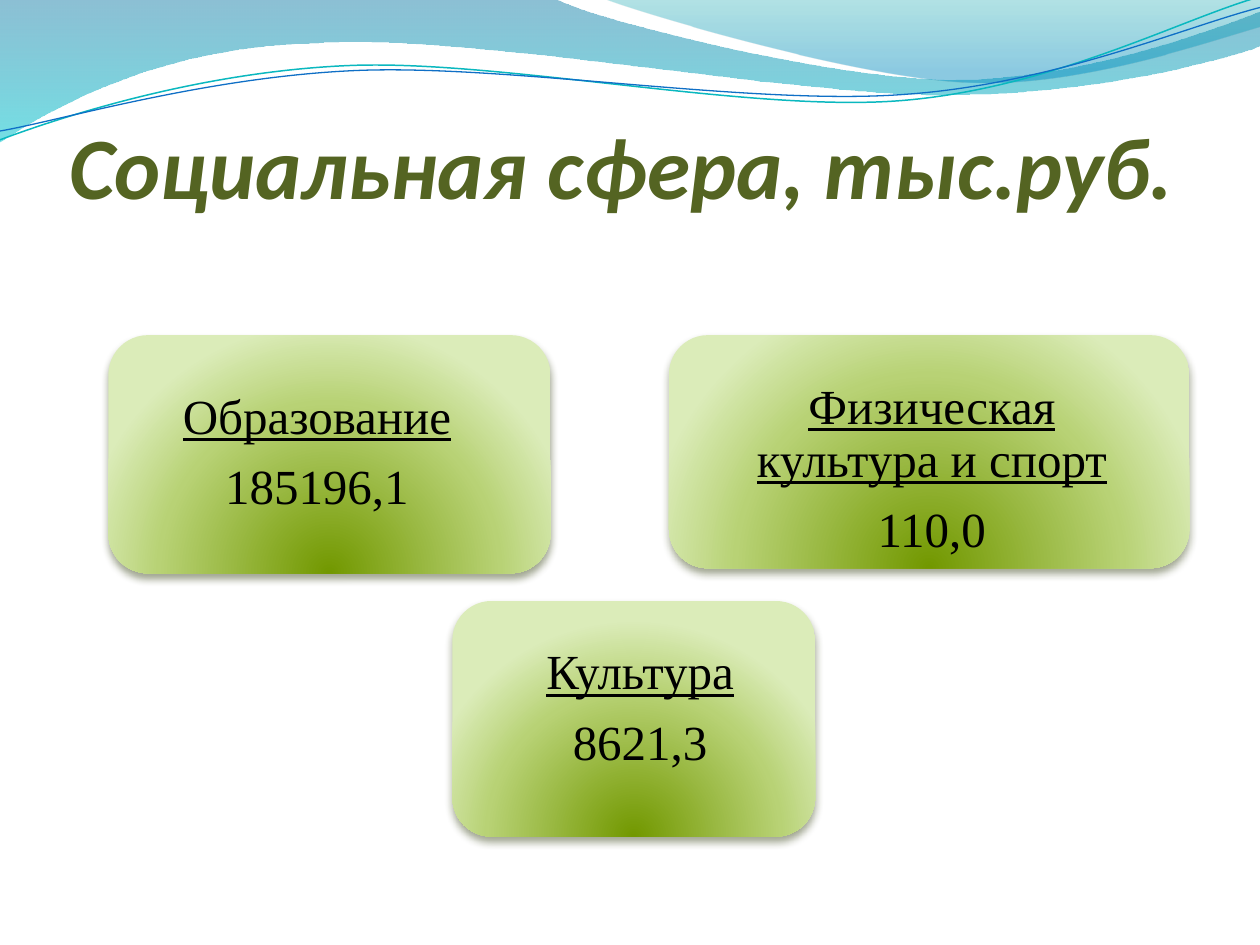
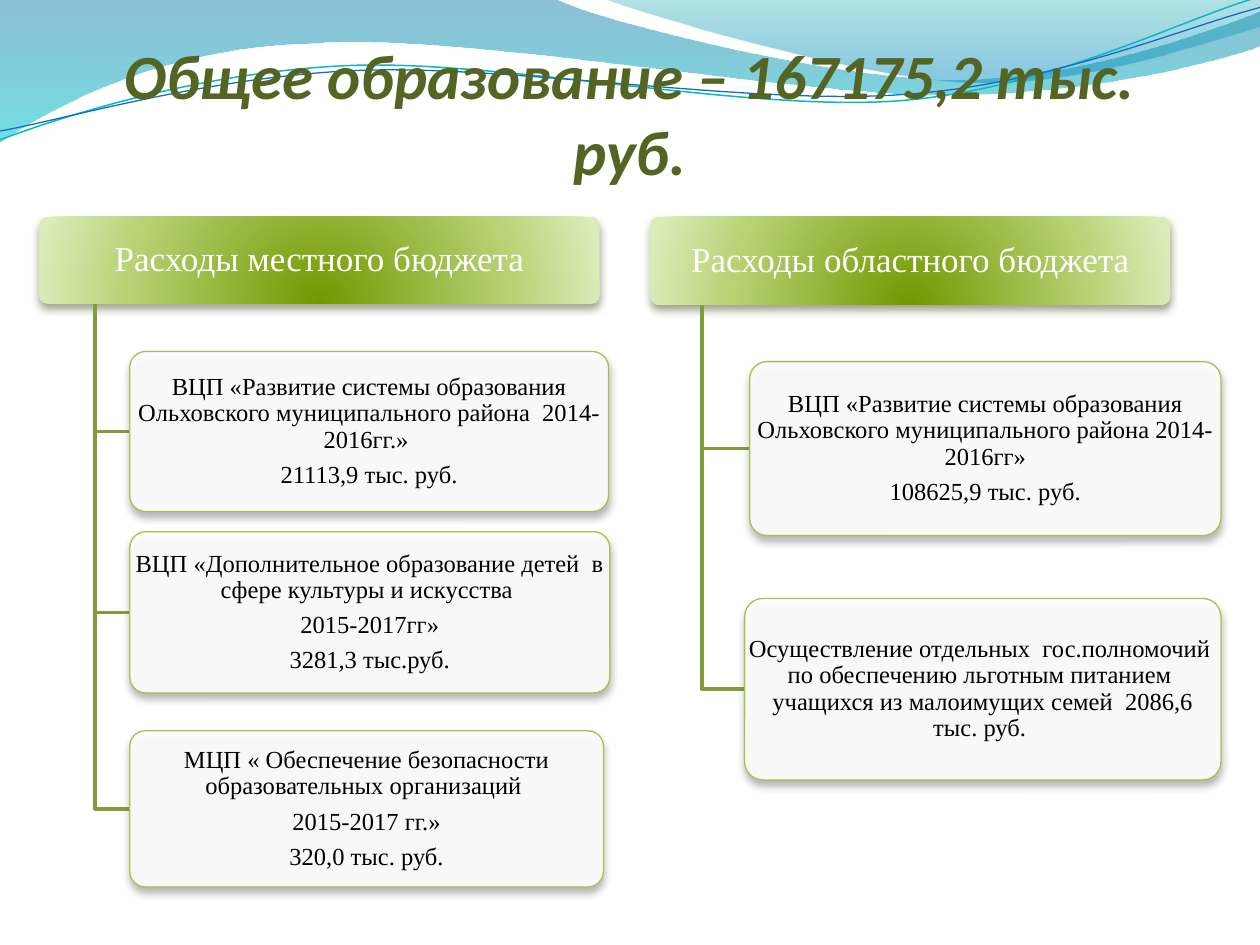
from dataclasses import dataclass
from math import cos, radians, sin

from lxml.etree import SubElement
from pptx import Presentation
from pptx.dml.color import RGBColor
from pptx.enum.shapes import MSO_SHAPE
from pptx.enum.text import MSO_ANCHOR as Anchor, MSO_AUTO_SIZE, PP_ALIGN as Align
from pptx.oxml.ns import qn
from pptx.util import Inches, Pt

WHITE, BLACK = "FFFFFF", "000000"
TITLE_COLOR = "546422"
BRANCH_COLOR = "849B3A"
ITEM_BORDER = "A5C249"
GREEN_SHADOW, GRAY_SHADOW = "3A4519", "5A5A5A"
TITLE_FONT, BODY_FONT = "Calibri", "Times New Roman"
GREEN_STOPS = [(0, "729800", 100), (68, "B8D275", 100), (100, "DBECB9", 100)]
WAVE_TILT = 2.7


@dataclass(frozen=True)
class Box:
    left: float
    top: float
    width: float
    height: float

    @property
    def bottom(self) -> float:
        return self.top + self.height

    @property
    def middle(self) -> float:
        return self.top + self.height / 2

    def lengths(self) -> list:
        return [Inches(v) for v in (self.left, self.top, self.width, self.height)]


@dataclass(frozen=True)
class Wave:
    start: tuple
    segments: list
    stops: list = ()
    line_color: str = ""
    line_width: float = 0
    pivot: tuple = ()


@dataclass(frozen=True)
class TextStyle:
    size: int
    color: str
    insets: tuple
    anchor: Anchor
    underline_first: bool = False


@dataclass(frozen=True)
class Card:
    box: Box
    lines: list
    text_box: Box = None


@dataclass(frozen=True)
class Branch:
    header: Card
    items: list


WAVES = [
    Wave((0, 0), [
        (4.4, -0.01),
        (4.76, 0.17, 6.64, 0.63, 7.58, 0.63), (8.53, 0.63, 9.58, 0.26, 10, 0.09),
        (10.01, 0.36),
        (9.83, 0.44, 8.7, 0.76, 7.46, 0.75), (6.22, 0.75, 3.82, 0.28, 2.57, 0.34),
        (1.29, 0.36, 0.46, 0.83, -0.01, 1.13),
        (0, 0),
    ], stops=[(0, "0074A1", 45), (100, "00C6CF", 55)]),
    Wave((4.79, -0.01), [
        (5.09, 0.11, 6.82, 0.62, 7.69, 0.65), (8.56, 0.69, 9.61, 0.32, 10, 0.21),
        (10, 0), (4.79, -0.01),
    ], stops=[(0, "00A1A9", 30), (80, "008BBF", 45)]),
    Wave((0, 1.11), [
        (0.48, 0.93, 1.58, 0.57, 2.77, 0.52), (3.95, 0.47, 5.93, 0.89, 7.13, 0.8),
        (8.33, 0.71, 9.38, 0.15, 9.98, -0.02),
    ], line_color="0AB8BF", line_width=0.85, pivot=(4.99, 0.57)),
    Wave((0, 1.04), [
        (0.47, 0.96, 1.64, 0.61, 2.83, 0.56), (4.03, 0.51, 5.97, 0.84, 7.17, 0.75),
        (8.36, 0.67, 9.41, 0.21, 10, 0.06),
    ], line_color="0F6FC6", line_width=0.75, pivot=(5, 0.59)),
]

SPHERE_STYLE = TextStyle(28, BLACK, (0.22, 0.22, 0.22, 0), Anchor.TOP, True)
HEADER_STYLE = TextStyle(20, WHITE, (0.04, 0.03, 0.04, 0.03), Anchor.MIDDLE)
ITEM_STYLE = TextStyle(14, BLACK, (0.03, 0.02, 0.03, 0.02), Anchor.MIDDLE)

SPHERES = [
    Card(Box(0.86, 2.66, 3.51, 1.89), ["Образование", "185196,1"],
         Box(1.17, 2.89, 2.69, 1.3)),
    Card(Box(5.31, 2.66, 4.13, 1.85), ["Физическая культура и спорт", "110,0"],
         Box(5.55, 2.81, 3.69, 1.62)),
    Card(Box(3.59, 4.77, 2.88, 1.87), ["Культура", "8621,3"],
         Box(3.83, 4.92, 2.5, 1.54)),
]

BRANCHES = [
    Branch(Card(Box(0.31, 1.72, 4.45, 0.69), ["Расходы местного бюджета"]), [
        Card(Box(1.03, 2.79, 3.8, 1.27), [
            "ВЦП «Развитие системы образования Ольховского муниципального района  2014-2016гг.» ",
            "21113,9 тыс. руб."]),
        Card(Box(1.03, 4.22, 3.81, 1.28), [
            "ВЦП «Дополнительное образование детей  в сфере культуры и искусства ",
            "2015-2017гг»", "3281,3 тыс.руб."]),
        Card(Box(1.03, 5.8, 3.76, 1.24), [
            "МЦП « Обеспечение безопасности образовательных организаций ",
            "2015-2017 гг.»", "320,0 тыс. руб."]),
    ]),
    Branch(Card(Box(5.16, 1.72, 4.13, 0.7), ["Расходы областного бюджета"]), [
        Card(Box(5.95, 2.87, 3.74, 1.38), [
            "ВЦП «Развитие системы образования Ольховского муниципального района 2014-2016гг»",
            "108625,9 тыс. руб."]),
        Card(Box(5.91, 4.75, 3.78, 1.44), [
            "Осуществление отдельных  гос.полномочий  по обеспечению льготным питанием  "
            "учащихся из малоимущих семей  2086,6 тыс. руб. "]),
    ]),
]


def rgb(color: str) -> RGBColor:
    return RGBColor.from_string(color)


def add_color(parent, color: str, opacity: int) -> None:
    color_element = SubElement(parent, qn("a:srgbClr"), val=color)
    if opacity < 100:
        SubElement(color_element, qn("a:alpha"), val=str(opacity * 1000))


def fill_gradient(shape, stops: list, circular: bool = False) -> None:
    shape.fill.gradient()
    gradient = shape.element.spPr.find(qn("a:gradFill"))
    for child in list(gradient):
        gradient.remove(child)
    stop_list = SubElement(gradient, qn("a:gsLst"))
    for position, color, opacity in stops:
        stop = SubElement(stop_list, qn("a:gs"), pos=str(position * 1000))
        add_color(stop, color, opacity)
    if circular:
        circle = SubElement(gradient, qn("a:path"), path="circle")
        SubElement(circle, qn("a:fillToRect"), l="50000", t="130000", r="50000", b="-30000")
    else:
        SubElement(gradient, qn("a:lin"), ang="5400000", scaled="1")


def add_shadow(shape, color: str) -> None:
    effects = shape.element.spPr.find(qn("a:effectLst"))
    shadow = SubElement(effects, qn("a:outerShdw"), blurRad=str(Pt(4.5)), dist=str(Pt(3)),
                        dir="5400000", rotWithShape="0")
    add_color(shadow, color, 48)


def turn(point: tuple, pivot: tuple, degrees: float) -> tuple:
    angle = radians(degrees)
    x, y = point[0] - pivot[0], point[1] - pivot[1]
    return (pivot[0] + x * cos(angle) - y * sin(angle),
            pivot[1] + x * sin(angle) + y * cos(angle))


def draw_outline(slide, points: list, closed: bool = False):
    start, *rest = [(Inches(x), Inches(y)) for x, y in points]
    builder = slide.shapes.build_freeform(*start)
    builder.add_line_segments(rest, close=closed)
    shape = builder.convert_to_shape()
    shape.shadow.inherit = False
    return shape


def paint_line(shape, color: str, width: float) -> None:
    shape.fill.background()
    shape.line.color.rgb = rgb(color)
    shape.line.width = Pt(width)


def bend_segments(shape, segments: list) -> None:
    steps = iter(list(shape.element.iter(qn("a:lnTo"))))
    for segment in segments:
        group = [next(steps) for _ in range(len(segment) // 2)]
        if len(group) == 3:
            curve = group[0].getparent().makeelement(qn("a:cubicBezTo"), {})
            group[0].addprevious(curve)
            for step in group:
                curve.append(step[0])
                step.getparent().remove(step)


def draw_wave(slide, wave: Wave):
    points = [wave.start] + [(segment[i], segment[i + 1]) for segment in wave.segments
                             for i in range(0, len(segment), 2)]
    if wave.pivot:
        points = [turn(point, wave.pivot, WAVE_TILT) for point in points]
    shape = draw_outline(slide, points, closed=bool(wave.stops))
    bend_segments(shape, wave.segments)
    if wave.stops:
        fill_gradient(shape, wave.stops)
        shape.line.fill.background()
    else:
        paint_line(shape, wave.line_color, wave.line_width)
        shape.rotation = 360 - WAVE_TILT
    return shape


def add_waves_to_layout(slide) -> None:
    layout_tree = slide.slide_layout.shapes.element
    for number, wave in enumerate(WAVES, start=100):
        shape = draw_wave(slide, wave)
        shape.element.nvSpPr.cNvPr.set("id", str(number))
        layout_tree.append(shape.element)


def set_insets(frame, insets: tuple) -> None:
    (frame.margin_left, frame.margin_top,
     frame.margin_right, frame.margin_bottom) = [Inches(inset) for inset in insets]


def set_title(slide, text: str, box: Box, size: int, align: Align) -> None:
    title = slide.shapes.title
    title.left, title.top, title.width, title.height = box.lengths()
    frame = title.text_frame
    frame.text = text
    frame.auto_size = MSO_AUTO_SIZE.NONE
    frame.vertical_anchor = Anchor.BOTTOM
    set_insets(frame, (0, 0.05, 0, 0))
    paragraph = frame.paragraphs[0]
    paragraph.alignment = align
    font = paragraph.runs[0].font
    font.name, font.size, font.bold, font.italic = TITLE_FONT, Pt(size), True, True
    font.color.rgb = rgb(TITLE_COLOR)


def draw_text(slide, box: Box, lines: list, style: TextStyle) -> None:
    frame = slide.shapes.add_textbox(*box.lengths()).text_frame
    frame.word_wrap = True
    frame.vertical_anchor = style.anchor
    set_insets(frame, style.insets)
    frame.text = "\n".join(lines)
    for index, paragraph in enumerate(frame.paragraphs):
        paragraph.alignment = Align.CENTER
        paragraph.line_spacing = 0.9
        paragraph.space_after = Pt(style.size * 0.35)
        font = paragraph.runs[0].font
        font.name, font.size = BODY_FONT, Pt(style.size)
        font.color.rgb = rgb(style.color)
        font.underline = style.underline_first and index == 0


def draw_rounded(slide, box: Box, shadow_color: str):
    shape = slide.shapes.add_shape(MSO_SHAPE.ROUNDED_RECTANGLE, *box.lengths())
    shape.shadow.inherit = False
    add_shadow(shape, shadow_color)
    return shape


def draw_green_card(slide, card: Card, style: TextStyle):
    shape = draw_rounded(slide, card.box, GREEN_SHADOW)
    fill_gradient(shape, GREEN_STOPS, circular=True)
    shape.line.fill.background()
    draw_text(slide, card.text_box or card.box, card.lines, style)
    return shape


def draw_item(slide, card: Card) -> None:
    shape = draw_rounded(slide, card.box, GRAY_SHADOW)
    shape.adjustments[0] = 0.1
    shape.fill.solid()
    shape.fill.fore_color.rgb = rgb(WHITE)
    fill_color = shape.element.spPr.find(qn("a:solidFill")).find(qn("a:srgbClr"))
    SubElement(fill_color, qn("a:alpha"), val="90000")
    shape.line.color.rgb = rgb(ITEM_BORDER)
    shape.line.width = Pt(0.75)
    draw_text(slide, card.box, card.lines, ITEM_STYLE)


def draw_branch(slide, branch: Branch) -> None:
    header = branch.header.box
    draw_green_card(slide, branch.header, HEADER_STYLE).adjustments[0] = 0.1
    trunk = header.left + header.width / 10
    for item in branch.items:
        elbow = [(trunk, header.bottom), (trunk, item.box.middle),
                 (item.box.left, item.box.middle)]
        paint_line(draw_outline(slide, elbow), BRANCH_COLOR, 2)
        draw_item(slide, item)


def main() -> None:
    presentation = Presentation()
    presentation.slide_width, presentation.slide_height = Inches(10), Inches(7.5)
    title_only = presentation.slide_layouts[5]

    social = presentation.slides.add_slide(title_only)
    add_waves_to_layout(social)
    set_title(social, "Социальная сфера, тыс.руб.", Box(0.55, 0.47, 9, 1.25), 50, Align.LEFT)
    for sphere in SPHERES:
        draw_green_card(social, sphere, SPHERE_STYLE)

    education = presentation.slides.add_slide(title_only)
    set_title(education, "Общее образование – 167175,2 тыс. руб.",
              Box(0.5, 0.16, 9, 1.33), 36, Align.CENTER)
    for branch in BRANCHES:
        draw_branch(education, branch)

    presentation.save("out.pptx")


if __name__ == "__main__":
    main()
